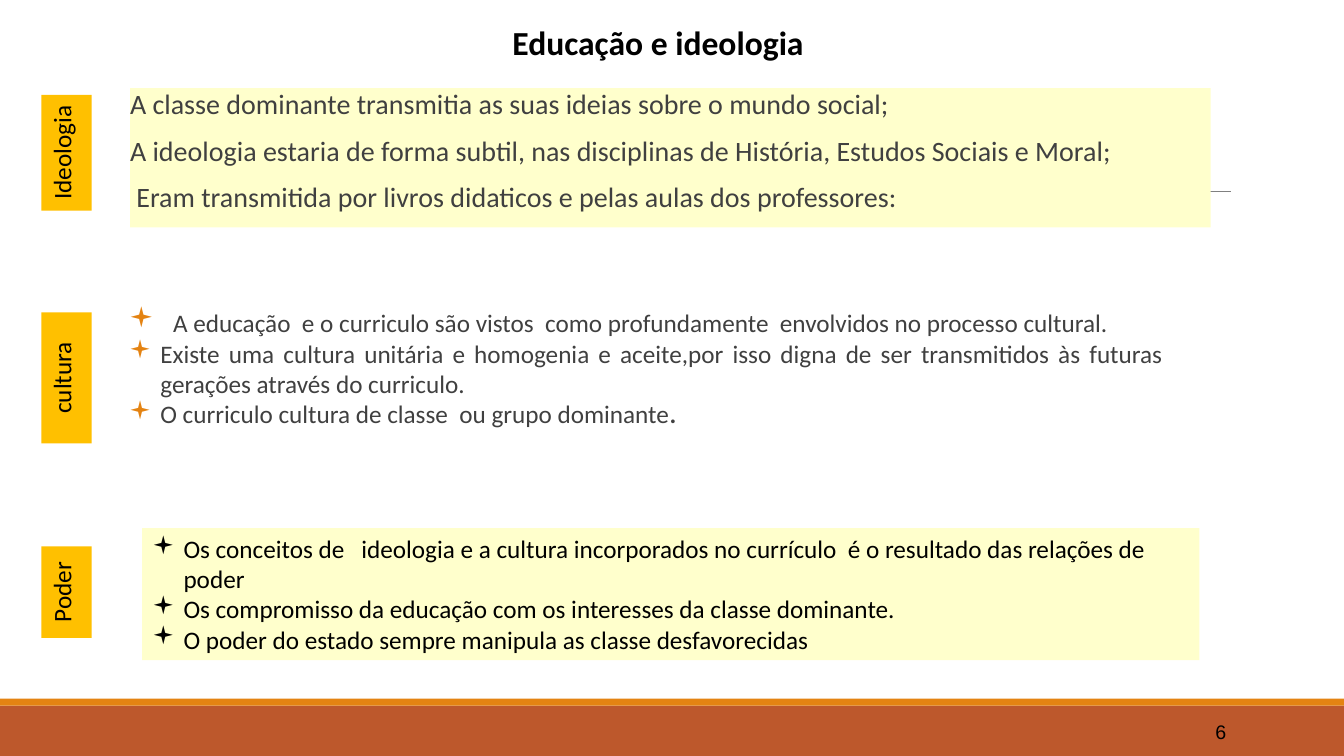
from lxml import etree
from pptx import Presentation
from pptx.dml.color import RGBColor
from pptx.enum.shapes import MSO_CONNECTOR, MSO_SHAPE
from pptx.enum.text import MSO_ANCHOR, PP_ALIGN
from pptx.oxml.ns import qn
from pptx.util import Pt

RECT = MSO_SHAPE.RECTANGLE
STRAIGHT = MSO_CONNECTOR.STRAIGHT
TOP, MIDDLE = MSO_ANCHOR.TOP, MSO_ANCHOR.MIDDLE
LEFT, CENTER, RIGHT, JUSTIFY = PP_ALIGN.LEFT, PP_ALIGN.CENTER, PP_ALIGN.RIGHT, PP_ALIGN.JUSTIFY

BLACK = RGBColor(0x00, 0x00, 0x00)
DARK = RGBColor(0x40, 0x40, 0x40)
GREY = RGBColor(0x80, 0x80, 0x80)
ORANGE = RGBColor(0xE4, 0x83, 0x12)
RUST = RGBColor(0xBD, 0x58, 0x2C)
CREAM = RGBColor(0xFF, 0xFF, 0xCC)
AMBER = RGBColor(0xFF, 0xC0, 0x00)

WIDTH, HEIGHT = 960, 540
LABEL_LEFT, LABEL_WIDTH = 29.5, 36

IDEOLOGY = [
    "A classe dominante transmitia as suas ideias sobre o mundo social;",
    "A ideologia estaria de forma subtil, nas disciplinas de História, Estudos Sociais e Moral;",
    " Eram transmitida por livros didaticos e pelas aulas dos professores:",
]
CULTURE = [
    [(" ", {"size": Pt(20)}),
     ("A educação  e o curriculo são vistos  como profundamente  envolvidos no processo cultural.", {})],
    "Existe uma cultura unitária e homogenia e aceite,por isso digna de ser transmitidos "
    "às futuras gerações através do curriculo.",
    [("O curriculo cultura de classe  ou grupo dominante", {}), (".", {"bold": True})],
]
POWER = [
    "Os conceitos de   ideologia e a cultura incorporados no currículo  é o resultado das relações de poder",
    "Os compromisso da educação com os interesses da classe dominante.",
    "O poder do estado sempre manipula as classe desfavorecidas",
]


def set_attrs(obj, values):
    for name, value in values.items():
        setattr(obj, name, value)


def add_rect(slide, box, color):
    sp = slide.shapes.add_shape(RECT, *map(Pt, box))
    sp.shadow.inherit = False
    sp.fill.solid()
    sp.fill.fore_color.rgb = color
    sp.line.fill.background()
    return sp


def add_text_box(slide, box):
    return slide.shapes.add_textbox(*map(Pt, box))


def write(sp, paragraphs, size, color=BLACK, font="Calibri", bold=False, frame=None, para=None):
    tf = sp.text_frame
    set_attrs(tf, {"word_wrap": True, "vertical_anchor": TOP, **(frame or {})})
    for i, runs in enumerate(paragraphs):
        p = tf.paragraphs[0] if i == 0 else tf.add_paragraph()
        set_attrs(p, {"alignment": LEFT, **(para or {})})
        if isinstance(runs, str):
            runs = [(runs, {})]
        for text, changes in runs:
            r = p.add_run()
            r.text = text
            set_attrs(r.font, {"name": font, "size": Pt(size), "bold": bold, **changes})
            r.font.color.rgb = color
    return tf


def add_bullet(p, color, indent):
    pPr = p._p.get_or_add_pPr()
    pPr.set("marL", str(Pt(indent)))
    pPr.set("indent", str(-Pt(indent)))
    clr = etree.SubElement(pPr, qn("a:buClr"))
    etree.SubElement(clr, qn("a:srgbClr"), val=str(color))
    etree.SubElement(pPr, qn("a:buFont"), typeface="Wingdings")
    etree.SubElement(pPr, qn("a:buChar"), char="▪")


def add_footer(slide, box):
    left, top, width, height = box
    stripe = 5
    add_rect(slide, (left, top + stripe, width, height - stripe), RUST)
    add_rect(slide, (left, top, width, stripe), ORANGE)
    sp = add_text_box(slide, (left + 780, top + 9.5, 103, 28.8))
    write(sp, ["6"], 14, font="Arial", frame={"vertical_anchor": MIDDLE}, para={"alignment": RIGHT})


def add_rule(slide, box):
    left, top, width, height = box
    line = slide.shapes.add_connector(STRAIGHT, *map(Pt, (left, top, left + width, top + height)))
    line.line.color.rgb = GREY
    line.line.width = Pt(0.5)
    etree.SubElement(line._element.spPr, qn("a:effectLst"))


def add_title(slide, box):
    sp = slide.shapes.title
    set_attrs(sp, dict(zip(("left", "top", "width", "height"), map(Pt, box))))
    write(sp, ["Educação e ideologia"], 24, bold=True, frame={"word_wrap": False}, para={"alignment": CENTER})


def add_label(slide, text, box):
    tf = write(add_rect(slide, box, AMBER), [text], 18, para={"alignment": CENTER})
    tf._txBody.bodyPr.set("vert", "vert270")


def add_ideology(slide, box):
    write(add_rect(slide, box, CREAM), IDEOLOGY, 20, DARK,
          frame={"margin_left": 0, "margin_right": 0},
          para={"alignment": JUSTIFY, "line_spacing": 0.8, "space_before": Pt(12), "space_after": Pt(2)})


def add_culture(slide, box):
    tf = write(add_text_box(slide, box), CULTURE, 18, DARK, para={"alignment": JUSTIFY})
    for p, indent in zip(tf.paragraphs, (27, 22.5, 22.5)):
        add_bullet(p, ORANGE, indent)


def add_power(slide, box):
    tf = write(add_rect(slide, box, CREAM), POWER, 18)
    for p in tf.paragraphs:
        add_bullet(p, BLACK, 22.5)


def main():
    prs = Presentation()
    prs.slide_width, prs.slide_height = Pt(WIDTH), Pt(HEIGHT)
    slide = prs.slides.add_slide(prs.slide_layouts[5])
    add_footer(slide, (0, 499, WIDTH, 41))
    add_rule(slide, (94.3, 136.8, 784.8, 0))
    add_ideology(slide, (92.9, 63, 772, 99.4))
    add_title(slide, (357.8, 12.2, 224.6, 36))
    add_culture(slide, (85, 213.8, 753, 97.2))
    add_power(slide, (101.5, 377.3, 755.3, 94.3))
    for text, top, height in (("Ideologia ", 67.7, 82.8), ("cultura", 223.2, 93.6), ("Poder", 390.2, 65.5)):
        add_label(slide, text, (LABEL_LEFT, top, LABEL_WIDTH, height))
    prs.save("out.pptx")


if __name__ == "__main__":
    main()
